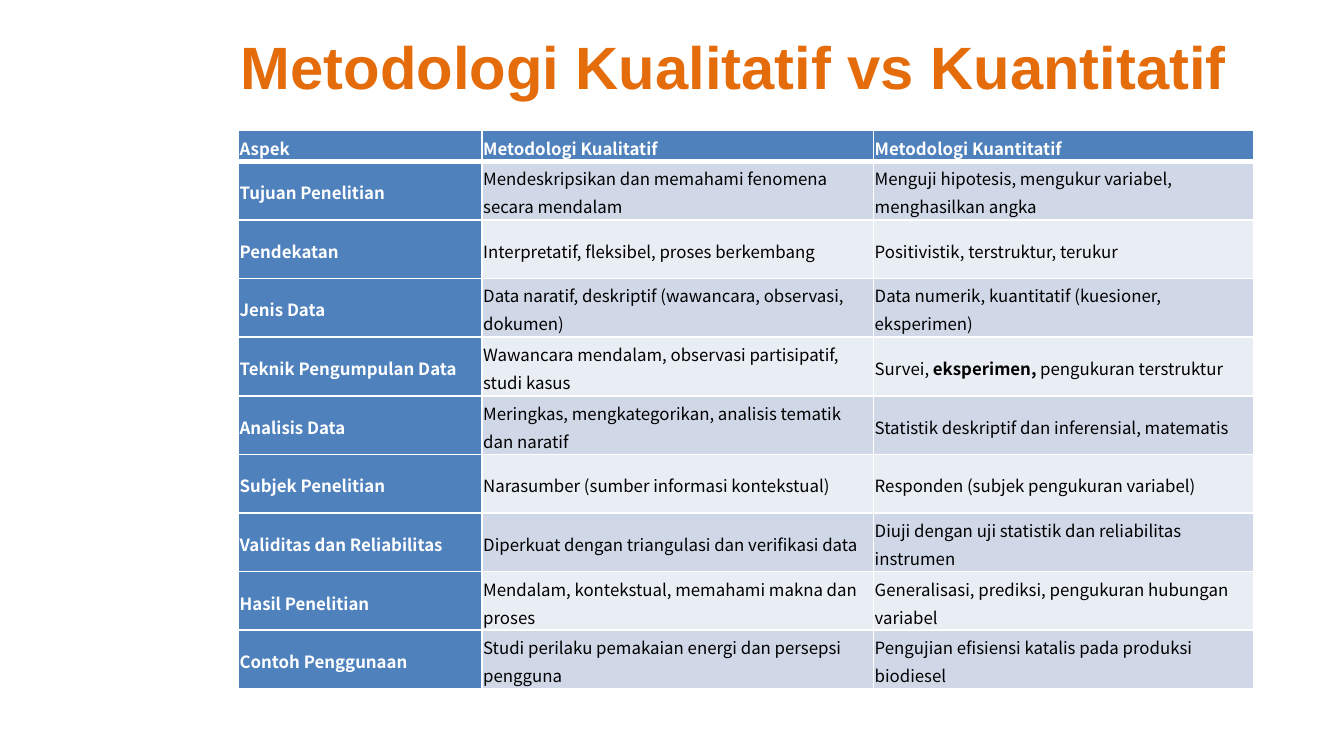
from dataclasses import dataclass

from lxml import etree
from pptx import Presentation
from pptx.dml.color import RGBColor
from pptx.enum.text import MSO_ANCHOR, PP_ALIGN
from pptx.oxml.ns import qn
from pptx.slide import Slide
from pptx.util import Pt

MIDDLE = MSO_ANCHOR.MIDDLE
LEFT = PP_ALIGN.LEFT
TITLE_ONLY = 5

COLUMN_WIDTHS = [130.5, 209.75, 204]
HEADER_HEIGHT = 15.8
ROW_HEIGHT = 31.35

ROWS = [
    ["Aspek", "Metodologi Kualitatif", "Metodologi Kuantitatif"],
    ["Tujuan Penelitian",
     "Mendeskripsikan dan memahami fenomena secara mendalam",
     "Menguji hipotesis, mengukur variabel, menghasilkan angka"],
    ["Pendekatan",
     "Interpretatif, fleksibel, proses berkembang",
     "Positivistik, terstruktur, terukur"],
    ["Jenis Data",
     "Data naratif, deskriptif (wawancara, observasi, dokumen)",
     "Data numerik, kuantitatif (kuesioner, eksperimen)"],
    ["Teknik Pengumpulan Data",
     "Wawancara mendalam, observasi partisipatif, studi kasus",
     "Survei, **eksperimen, **pengukuran terstruktur"],
    ["Analisis Data",
     "Meringkas, mengkategorikan, analisis tematik dan naratif",
     "Statistik deskriptif dan inferensial, matematis"],
    ["Subjek Penelitian",
     "Narasumber (sumber informasi kontekstual)",
     "Responden (subjek pengukuran variabel)"],
    ["Validitas dan Reliabilitas",
     "Diperkuat dengan triangulasi dan verifikasi data",
     "Diuji dengan uji statistik dan reliabilitas instrumen"],
    ["Hasil Penelitian",
     "Mendalam, kontekstual, memahami makna dan proses",
     "Generalisasi, prediksi, pengukuran hubungan variabel"],
    ["Contoh Penggunaan",
     "Studi perilaku pemakaian energi dan persepsi pengguna",
     "Pengujian efisiensi katalis pada produksi biodiesel"],
]


def color(value):
    return RGBColor.from_string(value)


def write_text(frame, text, *, font, size, fill, bold=False,
               line_spacing=None, space_after=None):
    frame.word_wrap = True
    paragraph = frame.paragraphs[0]
    paragraph.alignment = LEFT
    if line_spacing is not None:
        paragraph.line_spacing = line_spacing
    if space_after is not None:
        paragraph.space_after = Pt(space_after)
    for index, part in enumerate(text.split("**")):
        run = paragraph.add_run()
        run.text = part
        run.font.name = font
        run.font.size = Pt(size)
        run.font.bold = bold or index % 2 == 1
        run.font.color.rgb = color(fill)


def add_border(cell, side, width, line_color):
    properties = cell._tc.get_or_add_tcPr()
    line = etree.SubElement(properties, qn(f"a:ln{side}"), w=str(Pt(width)))
    fill = etree.SubElement(line, qn("a:solidFill"))
    etree.SubElement(fill, qn("a:srgbClr"), val=line_color)


@dataclass
class SlideBuilder:
    slide: Slide
    title_font: str = "Arial"
    table_font: str = "Noto Sans CJK KR"
    title_color: str = "E46C0A"
    heading_fill: str = "4F81BD"
    band_fills: tuple = ("E9EDF4", "D0D8E8")
    white: str = "FFFFFF"
    black: str = "000000"

    def add_title(self, text, left, top, width, height):
        title = self.slide.shapes.title
        title.left, title.top = Pt(left), Pt(top)
        title.width, title.height = Pt(width), Pt(height)
        title.text_frame.vertical_anchor = MIDDLE
        write_text(title.text_frame, text, font=self.title_font, size=32,
                   fill=self.title_color, bold=True)

    def add_table(self, rows, left, top):
        heights = [HEADER_HEIGHT] + [ROW_HEIGHT] * (len(rows) - 1)
        frame = self.slide.shapes.add_table(
            len(rows), len(COLUMN_WIDTHS), Pt(left), Pt(top),
            Pt(sum(COLUMN_WIDTHS)), Pt(sum(heights)))
        table = frame.table
        for column, width in zip(table.columns, COLUMN_WIDTHS):
            column.width = Pt(width)
        for row, height in zip(table.rows, heights):
            row.height = Pt(height)
        for row_index, texts in enumerate(rows):
            for column_index, text in enumerate(texts):
                self.format_cell(table.cell(row_index, column_index), text,
                                 row_index, column_index)

    def format_cell(self, cell, text, row_index, column_index):
        heading = row_index == 0 or column_index == 0
        cell.vertical_anchor = MIDDLE
        cell.margin_left = cell.margin_right = Pt(0.7)
        cell.margin_top = cell.margin_bottom = Pt(0.7)
        widths = {"L": 1, "R": 1, "T": 3 if row_index == 1 else 1,
                  "B": 3 if row_index == 0 else 1}
        for side, width in widths.items():
            add_border(cell, side, width, self.white)
        cell.fill.solid()
        cell.fill.fore_color.rgb = color(
            self.heading_fill if heading else self.band_fills[row_index % 2])
        write_text(cell.text_frame, text, font=self.table_font, size=9,
                   fill=self.white if heading else self.black, bold=heading,
                   line_spacing=1.15, space_after=8)


def main():
    presentation = Presentation()
    presentation.slide_width = Pt(720)
    presentation.slide_height = Pt(405)
    layout = presentation.slide_layouts[TITLE_ONLY]
    builder = SlideBuilder(presentation.slides.add_slide(layout))
    builder.add_title("Metodologi Kualitatif vs Kuantitatif", 121.8, 0, 598.2, 70)
    builder.add_table(ROWS, 127.7, 70)
    presentation.save("out.pptx")


if __name__ == "__main__":
    main()
